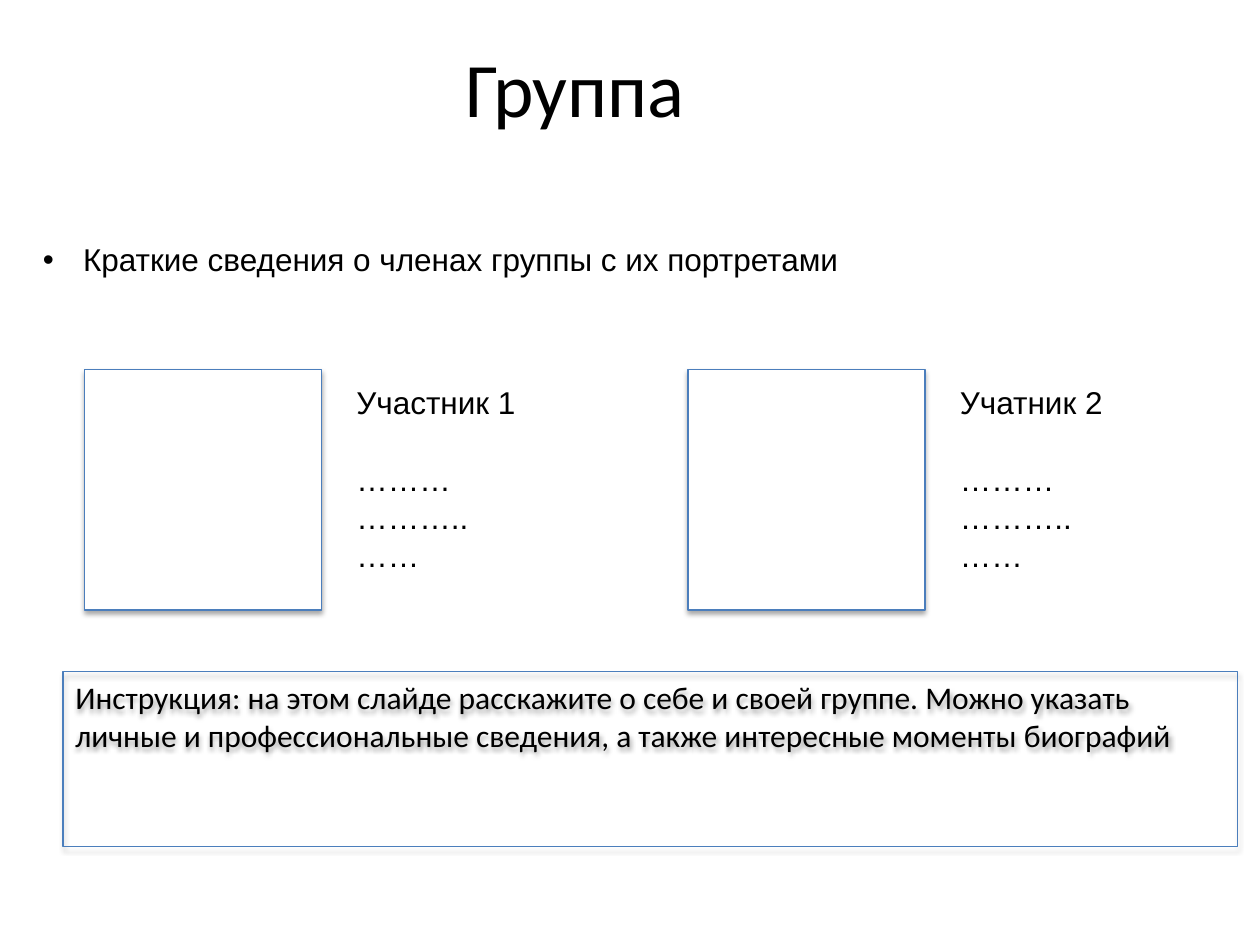
import pptx
import pptx.util
import pptx.dml.color
import pptx.enum.shapes
import pptx.enum.text
import pptx.oxml
import pptx.oxml.ns
from dataclasses import dataclass

Pt = pptx.util.Pt
ALIGN = pptx.enum.text.PP_ALIGN
ANCHOR = pptx.enum.text.MSO_ANCHOR
RECT = pptx.enum.shapes.MSO_SHAPE.RECTANGLE


@dataclass(frozen=True)
class Theme:
    ink: str = "000000"
    paper: str = "FFFFFF"
    edge: str = "4B7EBC"
    head: str = "Calibri"
    body: str = "Arial"
    big: int = 44
    size: int = 18
    pitch: float = 21.8


THEME = Theme()


def rgb(code):
    return pptx.dml.color.RGBColor.from_string(code)


def node(host, tag, **attrs):
    """Append a drawing element to its host and return it."""
    item = pptx.oxml.parse_xml(f'<a:{tag} {pptx.oxml.ns.nsdecls("a")}/>')
    for key, value in attrs.items():
        item.set(key, str(value))
    host.append(item)
    return item


def write(frame, text, font=THEME.body, size=THEME.size, align=ALIGN.LEFT,
          anchor=ANCHOR.TOP, pitch=None):
    """Fill a text frame, one paragraph for each line of text."""
    frame.word_wrap = True
    frame.vertical_anchor = anchor
    for i, line in enumerate(text.split("\n")):
        para = frame.paragraphs[0] if i == 0 else frame.add_paragraph()
        para.alignment = align
        if pitch:
            para.line_spacing = Pt(pitch)
        run = para.add_run()
        run.text = line
        run.font.name = font
        run.font.size = Pt(size)
        run.font.color.rgb = rgb(THEME.ink)
    return frame.paragraphs


def label(slide, box, text, **form):
    shape = slide.shapes.add_textbox(*map(Pt, box))
    return shape.text_frame, write(shape.text_frame, text, **form)


def panel(slide, box, fill=None):
    """Thin outlined rectangle with a soft shadow below it."""
    shape = slide.shapes.add_shape(RECT, *map(Pt, box))
    if fill:
        shape.fill.solid()
        shape.fill.fore_color.rgb = rgb(fill)
    else:
        shape.fill.background()
    shape.line.color.rgb = rgb(THEME.edge)
    shape.line.width = Pt(0.75)
    shape.shadow.inherit = False
    effects = shape._element.spPr.find(pptx.oxml.ns.qn("a:effectLst"))
    shade = node(effects, "outerShdw", blurRad=int(Pt(3.1)), dist=int(Pt(1.8)),
                 dir=90 * 60000, rotWithShape=0)
    tint = node(shade, "srgbClr", val=THEME.ink)
    node(tint, "alpha", val=35000)
    return shape


def title(slide, box):
    label(slide, box, "Группа", font=THEME.head, size=THEME.big,
          align=ALIGN.CENTER, anchor=ANCHOR.MIDDLE)


def intro(slide, box):
    frame, paras = label(slide, box, " Краткие сведения о членах группы с их портретами")
    frame.margin_left = frame.margin_right = Pt(6.5)
    frame.margin_top = Pt(37.4)
    props = paras[0]._p.get_or_add_pPr()
    props.set("marL", str(int(Pt(36))))
    props.set("indent", str(-int(Pt(18))))
    node(props, "buFont", typeface=THEME.body)
    node(props, "buChar", char="•")


def member(slide, box, name):
    """Portrait frame on the left, name and details on the right."""
    left, top, width, height = box
    side = 135.4
    panel(slide, (left, top, side, height), THEME.paper)
    gap = 13
    notes = (left + side + gap, top + 4.3, width - side - gap, 115.2)
    _, paras = label(slide, notes, name + "\n………\n………..\n……", pitch=THEME.pitch)
    paras[1].space_before = Pt(THEME.pitch)


def guide(slide, box):
    shape = panel(slide, box)
    write(shape.text_frame,
          "Инструкция: на этом слайде расскажите о себе и своей группе. "
          "Можно указать личные и профессиональные сведения, "
          "а также интересные моменты биографий", font=THEME.head)


def main():
    deck = pptx.Presentation()
    deck.slide_width, deck.slide_height = Pt(720), Pt(540)
    slide = deck.slides.add_slide(deck.slide_layouts[6])

    # Heading and lead line
    title(slide, (21.6, 19.4, 614.2, 60.5))
    intro(slide, (0, 100, 720, 402.5))

    # Group members, side by side
    for i, name in enumerate(("Участник 1", "Учатник 2")):
        member(slide, (48.2 + i * 344.9, 211, 294.6, 137.5), name)

    # Instruction
    guide(slide, (36, 383.8, 671, 100.1))
    deck.save("out.pptx")


if __name__ == "__main__":
    main()
